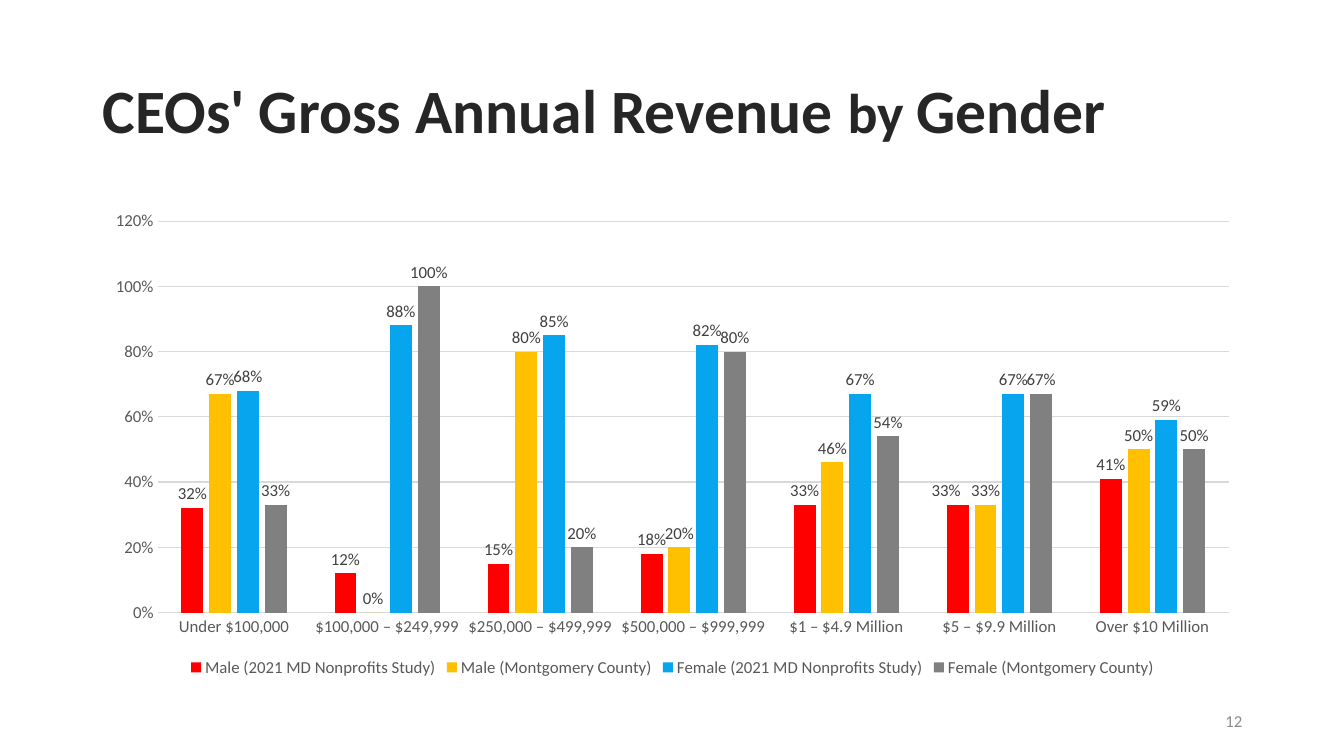
from lxml import etree
from pptx import Presentation
from pptx import util as u
from pptx.chart.data import CategoryChartData
from pptx.dml.color import RGBColor
from pptx.enum import chart as ch, text
from pptx.oxml import parse_xml
from pptx.oxml.ns import nsdecls

FONT = "Calibri"
TITLE = RGBColor(0x26, 0x26, 0x26)
LABEL = RGBColor(0x40, 0x40, 0x40)
AXIS = RGBColor(0x59, 0x59, 0x59)
NUMBER = RGBColor(0x8C, 0x8C, 0x8C)
GRID = RGBColor(0xD9, 0xD9, 0xD9)
RED = RGBColor(0xFF, 0x00, 0x00)
GOLD = RGBColor(0xFF, 0xC0, 0x00)
BLUE = RGBColor(0x08, 0xA5, 0xEF)
GRAY = RGBColor(0x80, 0x80, 0x80)

CATEGORIES = ["Under $100,000", "$100,000 – $249,999", "$250,000 – $499,999",
              "$500,000 – $999,999", "$1 – $4.9 Million", "$5 – $9.9 Million",
              "Over $10 Million"]
SERIES = [
    ("Male (2021 MD Nonprofits Study)", RED, (0.32, 0.12, 0.15, 0.18, 0.33, 0.33, 0.41)),
    ("Male (Montgomery County)", GOLD, (0.67, 0, 0.8, 0.2, 0.46, 0.33, 0.5)),
    ("Female (2021 MD Nonprofits Study)", BLUE, (0.68, 0.88, 0.85, 0.82, 0.67, 0.67, 0.59)),
    ("Female (Montgomery County)", GRAY, (0.33, 1, 0.2, 0.8, 0.54, 0.67, 0.5)),
]


def style_font(font, size=12, color=AXIS, bold=False):
    font.name = FONT
    font.size = u.Pt(size)
    font.bold = bold
    font.color.rgb = color


def add_run(p, content, **fmt):
    r = p.add_run()
    r.text = content
    style_font(r.font, **fmt)


def style_line(line):
    line.color.rgb = GRID
    line.width = u.Pt(0.75)


def set_frame(sp, x, y, w, h, align):
    sp.left, sp.top, sp.width, sp.height = map(u.Inches, (x, y, w, h))
    tf = sp.text_frame
    tf.word_wrap = True
    tf.auto_size = text.MSO_AUTO_SIZE.NONE
    tf.vertical_anchor = text.MSO_ANCHOR.MIDDLE
    p = tf.paragraphs[0]
    p.alignment = align
    return p


def add_title(s, x, y, w, h):
    p = set_frame(s.shapes.title, x, y, w, h, text.PP_ALIGN.LEFT)
    p.line_spacing = 0.9
    for content, size in (("CEOs' Gross Annual Revenue ", 44), ("by ", 40), ("Gender", 44)):
        add_run(p, content, size=size, color=TITLE, bold=True)


def shift_label(chart, series, index, dx):
    label = series.points[index].data_label
    style_font(label.font, color=LABEL)
    label.position = ch.XL_LABEL_POSITION.OUTSIDE_END
    layout = parse_xml(f'<c:layout {nsdecls("c")}><c:manualLayout>'
                       f'<c:x val="{dx}"/><c:y val="0"/></c:manualLayout></c:layout>')
    chart.element.xpath(".//c:dLbl/c:idx")[0].addnext(layout)


def add_revenue_chart(s, x, y, w, h):
    data = CategoryChartData(number_format="0%")
    data.categories = CATEGORIES
    for name, _, values in SERIES:
        data.add_series(name, values)
    frame = s.shapes.add_chart(ch.XL_CHART_TYPE.COLUMN_CLUSTERED,
                               *map(u.Inches, (x, y, w, h)), data)
    chart = frame.chart
    style_font(chart.font)
    chart.has_title = False
    chart.has_legend = True
    chart.legend.position = ch.XL_LEGEND_POSITION.BOTTOM
    chart.legend.include_in_layout = False
    style_font(chart.legend.font)

    plot = chart.plots[0]
    plot.gap_width, plot.overlap = 219, -27
    plot.vary_by_categories = False
    for series, (_, color, _) in zip(plot.series, SERIES):
        series.format.fill.solid()
        series.format.fill.fore_color.rgb = color
        series.invert_if_negative = False
        labels = series.data_labels
        labels.show_value = True
        labels.number_format = "0%"
        labels.number_format_is_linked = False
        labels.position = ch.XL_LABEL_POSITION.OUTSIDE_END
        style_font(labels.font, color=LABEL)
    shift_label(chart, plot.series[0], 5, -0.01)

    for axis in (chart.category_axis, chart.value_axis):
        axis.major_tick_mark = axis.minor_tick_mark = ch.XL_TICK_MARK.NONE
        style_font(axis.tick_labels.font)
    style_line(chart.category_axis.format.line)
    values = chart.value_axis
    values.minimum_scale, values.maximum_scale, values.major_unit = 0, 1.2, 0.2
    values.tick_labels.number_format = "0%"
    values.tick_labels.number_format_is_linked = False
    values.format.line.fill.background()
    style_line(values.major_gridlines.format.line)


def add_page_number(s, x, y, w, h):
    sp = s.shapes.add_textbox(*map(u.Inches, (x, y, w, h)))
    p = set_frame(sp, x, y, w, h, text.PP_ALIGN.RIGHT)
    add_run(p, "12", color=NUMBER)


def main():
    prs = Presentation()
    prs.slide_width, prs.slide_height = u.Inches(13.33), u.Inches(7.5)
    s = prs.slides.add_slide(prs.slide_layouts[5])
    add_title(s, 0.92, 0.4, 11.5, 1.45)
    add_revenue_chart(s, 0.92, 2, 11.5, 4.76)
    add_page_number(s, 9.42, 6.95, 3, 0.4)
    prs.save("out.pptx")


if __name__ == "__main__":
    main()
